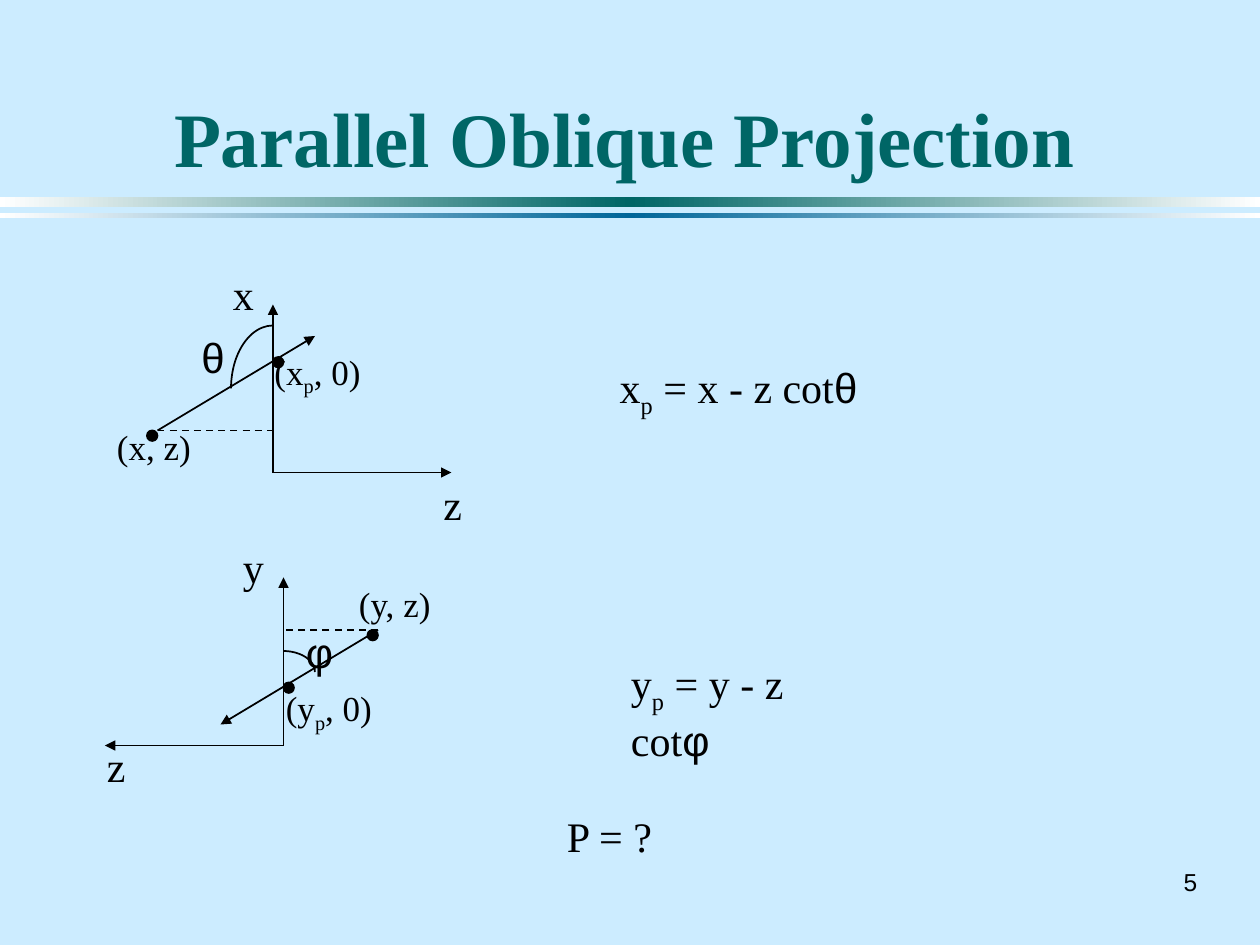
import copy

import pptx
import pptx.dml.color
import pptx.enum.dml
import pptx.enum.shapes
import pptx.enum.text
import pptx.oxml.ns
import pptx.oxml.xmlchemy
import pptx.util

COLORS = {"background": "CCECFF", "title": "006666", "ink": "000000",
          "white": "FFFFFF", "green": "006666", "blue": "006699"}
SERIF, SANS = "Times New Roman", "Arial"
SLIDE_W, SLIDE_H = 10, 7.5
GRID = 1 / 12  # inches per grid step of the diagrams

TITLE = "Parallel Oblique Projection"
BARS = [(1.56, 0.08, "green"), (1.69, 0.04, "blue")]  # top, height, middle colour

# Diagram points, in grid steps; an arc is (centre, radii, start and end degrees).
DIAGRAMS = [
    {"arrows": [((26, 45), (26, 29)), ((26, 45), (43, 45)), ((15, 41), (30, 32))],
     "dashed": ((15, 41), (26, 41)),
     "dots": [(14, 41), (26, 34)],
     "arc": ((26, 37), (4, 6), 180, 270)},
    {"arrows": [((27, 71), (27, 55)), ((27, 71), (10, 71)), ((36, 60), (21, 69))],
     "dashed": ((36, 60), (27, 60)),
     "dots": [(35, 60), (27, 65)],
     "arc": ((27, 64), (3, 2), 270, 0)},
]

# Left, top, width, size, wrap, runs; "_" starts a subscript, Greek is set in sans.
LABELS = [
    (1.75, 2.08, 0.25, 24, True, ["x"]),
    (3.42, 3.75, 0.25, 24, True, ["z"]),
    (0.83, 3.33, 0.83, 20, True, ["(x, z)"]),
    (2.08, 2.73, 1.17, 20, True, ["(x", "_p", ", 0)"]),
    (1.5, 2.58, 0.38, 24, False, ["θ"]),
    (4.82, 2.82, 2.09, 24, False, ["x", "_p", " = x - z cot", "θ"]),
    (1.83, 4.25, 0.25, 24, True, ["y"]),
    (0.75, 5.83, 0.25, 24, True, ["z"]),
    (2.75, 4.57, 0.83, 20, True, ["(y, z)"]),
    (2.17, 5.4, 1.17, 20, True, ["(y", "_p", ", 0)"]),
    (2.33, 4.92, 0.38, 24, False, ["φ"]),
    (4.91, 5.17, 1.9, 24, True, ["y", "_p", " = y - z cot", "φ"]),
    (4.4, 6.38, 0.89, 24, False, ["P = ?"]),
]
PAGE_NUMBER = "5"


def rgb(name):
    return pptx.dml.color.RGBColor.from_string(COLORS[name])


def inches(*lengths):
    return [pptx.util.Inches(length) for length in lengths]


def on_grid(*steps):
    return inches(*(step * GRID for step in steps))


def set_font(font, size, face, color="ink", bold=False):
    font.size, font.name, font.bold = pptx.util.Pt(size), face, bold
    font.color.rgb = rgb(color)


def add_shape(slide, kind, box):
    shape = slide.shapes.add_shape(kind, *box)
    shape.shadow.inherit = False
    return shape


def add_bar(slide, top, height, middle):
    """Full-width bar that fades from its middle colour to white at both ends."""
    bar = add_shape(slide, pptx.enum.shapes.MSO_SHAPE.RECTANGLE,
                    inches(0, top, SLIDE_W, height))
    bar.line.fill.background()
    bar.fill.gradient()
    bar.fill.gradient_angle = 0
    stop_list = bar._element.spPr.find(".//" + pptx.oxml.ns.qn("a:gsLst"))
    stop_list.insert(1, copy.deepcopy(stop_list[0]))
    for stop, position, color in zip(bar.fill.gradient_stops, (0, 0.5, 1),
                                     ("white", middle, "white")):
        stop.position = position
        stop.color.rgb = rgb(color)


def add_line(slide, start, end, arrow=False):
    line = slide.shapes.add_connector(pptx.enum.shapes.MSO_CONNECTOR.STRAIGHT,
                                      *on_grid(*start, *end))
    line.line.width = pptx.util.Pt(1)
    line.line.color.rgb = rgb("ink")
    if arrow:
        tail = pptx.oxml.xmlchemy.OxmlElement("a:tailEnd")
        tail.set("type", "triangle")
        line._element.spPr.find(pptx.oxml.ns.qn("a:ln")).append(tail)
    else:
        line.line.dash_style = pptx.enum.dml.MSO_LINE.DASH
    line._element.spPr.append(pptx.oxml.xmlchemy.OxmlElement("a:effectLst"))


def add_dot(slide, corner):
    dot = add_shape(slide, pptx.enum.shapes.MSO_SHAPE.OVAL, on_grid(*corner, 1, 1))
    dot.fill.solid()
    dot.fill.fore_color.rgb = rgb("ink")
    dot.line.color.rgb = rgb("ink")
    dot.line.width = pptx.util.Pt(1)


def add_arc(slide, center, radii, start, end):
    (x, y), (rx, ry) = center, radii
    arc = add_shape(slide, pptx.enum.shapes.MSO_SHAPE.ARC,
                    on_grid(x - rx, y - ry, 2 * rx, 2 * ry))
    for index, degrees in enumerate((start, end)):
        arc.adjustments[index] = degrees * 0.6  # 60000ths of a degree / 100000
    arc.fill.background()
    arc.line.color.rgb = rgb("ink")
    arc.line.width = pptx.util.Pt(1)


def add_label(slide, left, top, width, size, wrap, runs, face=SERIF):
    height = 0.5 if size == 24 else 0.43
    frame = slide.shapes.add_textbox(*inches(left, top, width, height)).text_frame
    frame.word_wrap = wrap
    paragraph = frame.paragraphs[0]
    set_font(paragraph.font, size, face)
    for text in runs:
        run = paragraph.add_run()
        run.text = text.lstrip("_")
        if text in "θφ":
            run.font.name = SANS
        if text.startswith("_"):
            run.font._element.set("baseline", "-25000")
    return paragraph


def main():
    deck = pptx.Presentation()
    deck.slide_width, deck.slide_height = inches(SLIDE_W, SLIDE_H)
    slide = deck.slides.add_slide(deck.slide_layouts[5])
    slide.background.fill.solid()
    slide.background.fill.fore_color.rgb = rgb("background")

    for bar in BARS:
        add_bar(slide, *bar)

    title = slide.shapes.title
    title.left, title.top, title.width, title.height = inches(0.67, 0.25, 8.58, 1.25)
    title.text_frame.text = TITLE
    title.text_frame.vertical_anchor = pptx.enum.text.MSO_ANCHOR.BOTTOM
    heading = title.text_frame.paragraphs[0]
    heading.alignment = pptx.enum.text.PP_ALIGN.CENTER
    set_font(heading.font, 44, SERIF, "title", bold=True)

    for diagram in DIAGRAMS:
        for start, end in diagram["arrows"]:
            add_line(slide, start, end, arrow=True)
        add_line(slide, *diagram["dashed"])
        for corner in diagram["dots"]:
            add_dot(slide, corner)
        add_arc(slide, *diagram["arc"])

    for label in LABELS:
        add_label(slide, *label)
    number = add_label(slide, 9.17, 6.83, 0.43, 14, False, [PAGE_NUMBER], face=SANS)
    number.alignment = pptx.enum.text.PP_ALIGN.RIGHT

    deck.save("out.pptx")


if __name__ == "__main__":
    main()
